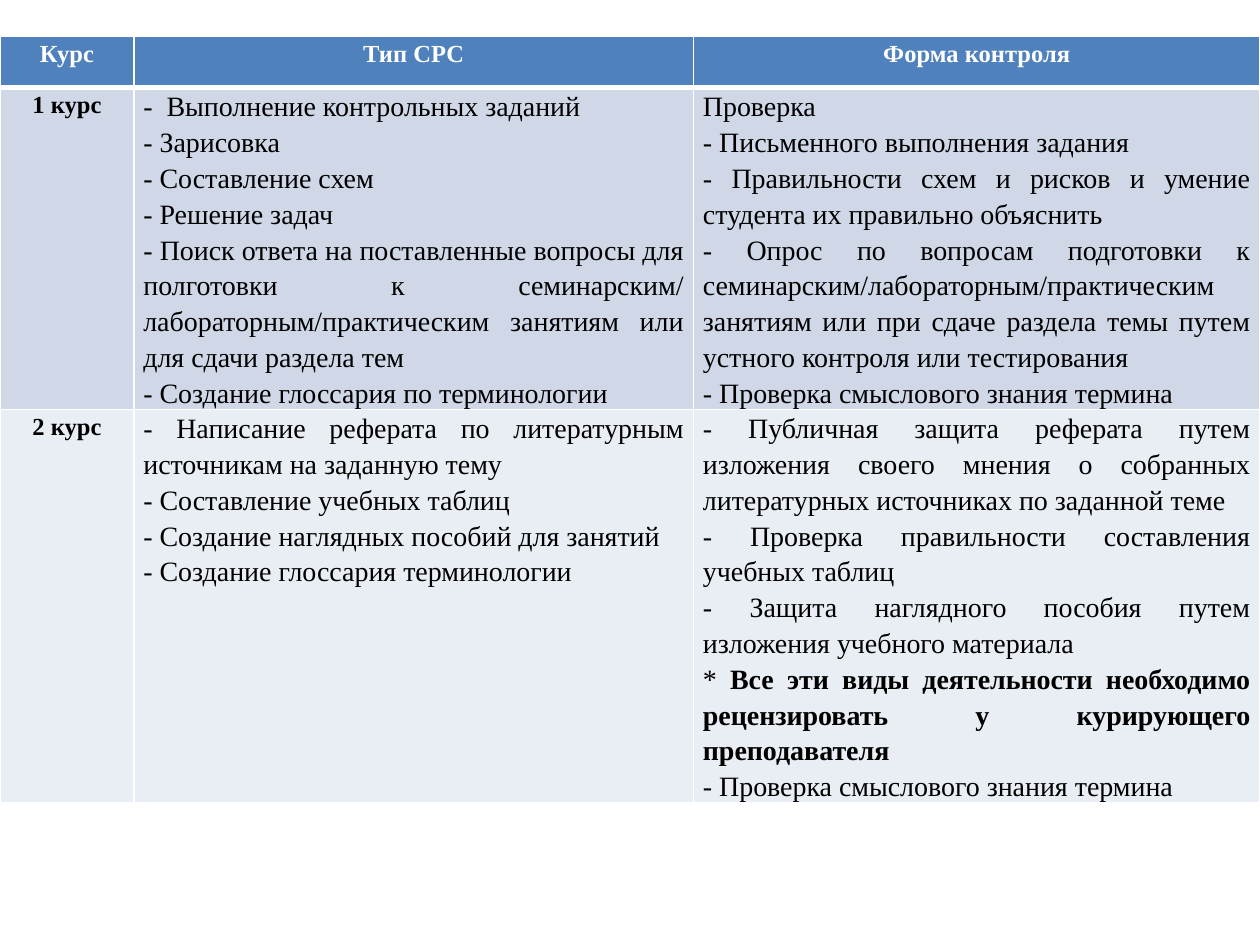
from lxml import etree
from pptx import Presentation
from pptx import util as u
from pptx.dml.color import RGBColor
from pptx.enum import text
from pptx.oxml import ns

WHITE, BLACK = "FFFFFF", "000000"
COLUMNS = (2.7, 11.28, 11.42)
ROWS = (1.02, 6.48, 7.92)
ROW_FILLS = ("4F81BD", "D0D8E8", "E9EDF4")
MARGINS = {"margin_left": u.Cm(0.19), "margin_right": u.Cm(0.19),
           "margin_top": 0, "margin_bottom": 0}
HEADING = {"size": u.Pt(14), "bold": True, "name": "Times New Roman"}
BODY = {"size": u.Pt(16), "bold": False, "name": "Times New Roman"}
BOLD_START = "Все эти виды"

HEADER = ("Курс", "Тип СРС", "Форма контроля")
FIRST_YEAR = (
    "1 курс",
    ("-  Выполнение контрольных заданий",
     "- Зарисовка",
     "- Составление схем",
     "- Решение задач",
     "- Поиск ответа на поставленные вопросы для полготовки к семинарским/ "
     "лабораторным/практическим занятиям или для сдачи раздела тем",
     "- Создание глоссария по терминологии"),
    ("Проверка",
     "- Письменного выполнения задания",
     "- Правильности схем и рисков и умение студента их правильно объяснить",
     "- Опрос по вопросам подготовки к семинарским/лабораторным/практическим "
     "занятиям или при сдаче раздела темы путем устного контроля или тестирования",
     "- Проверка смыслового знания термина"),
)
SECOND_YEAR = (
    "2 курс",
    ("- Написание реферата по литературным источникам на заданную тему",
     "- Составление учебных таблиц",
     "- Создание наглядных пособий для занятий",
     "- Создание глоссария терминологии"),
    ("- Публичная защита реферата путем изложения своего мнения о собранных "
     "литературных источниках по заданной теме",
     "- Проверка правильности составления учебных таблиц",
     "- Защита наглядного пособия путем изложения учебного материала",
     ("* ", BOLD_START + " деятельности необходимо рецензировать у курирующего "
      "преподавателя"),
     "- Проверка смыслового знания термина"),
)


def rgb(value):
    """Turn a hex string into a colour."""
    return RGBColor.from_string(value)


def set_format(target, values):
    """Set every attribute named in a dict of format values."""
    for attribute, value in values.items():
        setattr(target, attribute, value)


def draw_borders(cell, widths):
    """Give a cell white borders of the given widths in points."""
    properties = cell._tc.get_or_add_tcPr()
    for side, width in widths.items():
        line = etree.SubElement(properties, ns.qn(f"a:ln{side}"), w=str(u.Pt(width)))
        fill = etree.SubElement(line, ns.qn("a:solidFill"))
        etree.SubElement(fill, ns.qn("a:srgbClr"), val=WHITE)


def write_paragraph(paragraph, parts, font, color, alignment):
    """Write a plain part and an optional bold part into a paragraph."""
    set_format(paragraph, {"alignment": alignment, "line_spacing": 1.15})
    for index, part in enumerate(parts):
        run = paragraph.add_run()
        run.text = part
        set_format(run.font, font)
        run.font.color.rgb = rgb(color)
        if index:
            run.font.bold = True


def fill_cell(cell, content, row):
    """Style one cell and write its heading or its list of tasks."""
    set_format(cell, MARGINS)
    draw_borders(cell, {"L": 1, "R": 1, "T": 3 if row == 1 else 1,
                        "B": 3 if row == 0 else 1})
    cell.fill.solid()
    cell.fill.fore_color.rgb = rgb(ROW_FILLS[row])
    is_heading = isinstance(content, str)
    font = HEADING if is_heading else BODY
    alignment = text.PP_ALIGN.CENTER if is_heading else text.PP_ALIGN.JUSTIFY
    color = BLACK if row else WHITE
    tasks = (content,) if is_heading else content
    for index, task in enumerate(tasks):
        frame = cell.text_frame
        paragraph = frame.add_paragraph() if index else frame.paragraphs[0]
        parts = (task,) if isinstance(task, str) else task
        write_paragraph(paragraph, parts, font, color, alignment)


def add_coursework_table(slide, left, top):
    """Place the table of independent work by year of study."""
    coursework = slide.shapes.add_table(
        len(ROWS), len(COLUMNS), u.Cm(left), u.Cm(top),
        u.Cm(sum(COLUMNS)), u.Cm(sum(ROWS))).table
    for column, width in zip(coursework.columns, COLUMNS):
        column.width = u.Cm(width)
    for row, height in zip(coursework.rows, ROWS):
        row.height = u.Cm(height)
    for row, contents in enumerate((HEADER, FIRST_YEAR, SECOND_YEAR)):
        for column, content in enumerate(contents):
            fill_cell(coursework.cell(row, column), content, row)


def main():
    """Build the presentation and save it."""
    deck = Presentation()
    set_format(deck, {"slide_width": u.Cm(25.4), "slide_height": u.Cm(19.05)})
    slide = deck.slides.add_slide(deck.slide_layouts[6])
    add_coursework_table(slide, 0, 0.74)
    deck.save("out.pptx")


if __name__ == "__main__":
    main()
